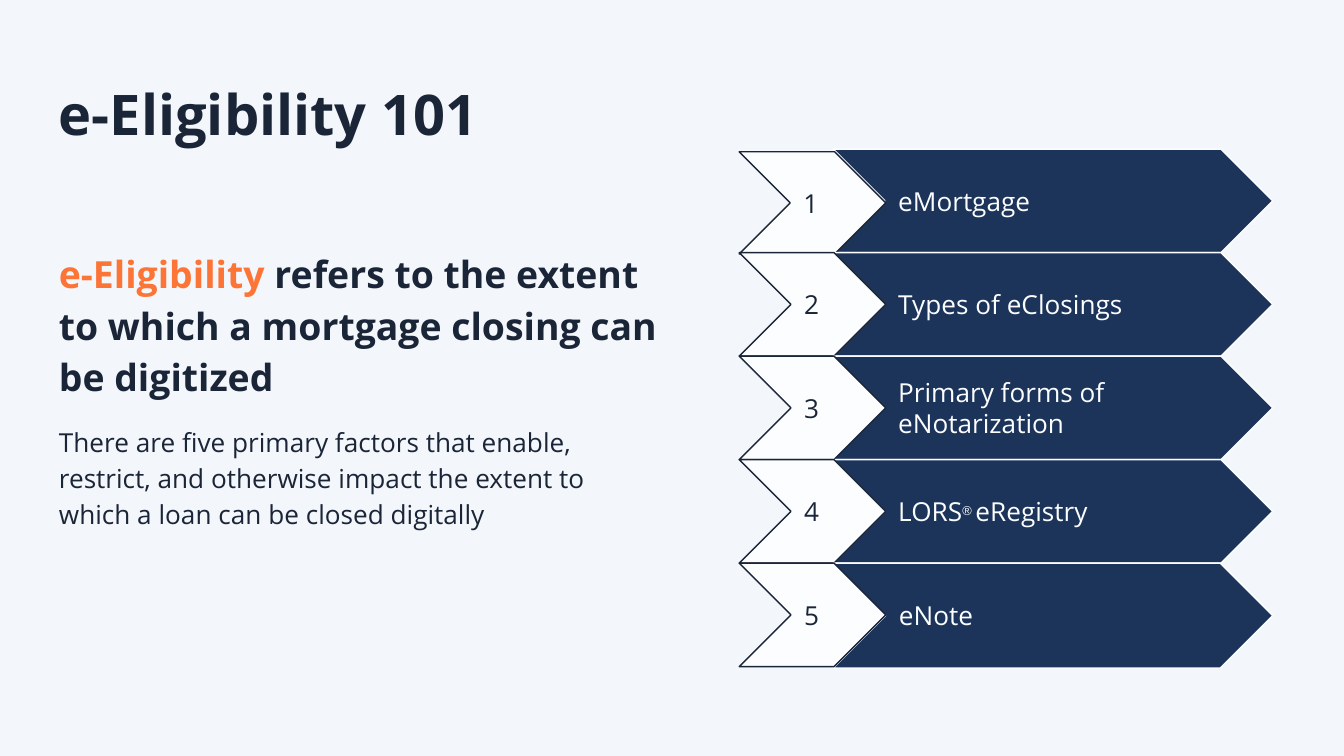
from pptx import Presentation
from pptx.dml.color import RGBColor as RGB
from pptx.enum.shapes import MSO_SHAPE as Shape
from pptx.enum.text import MSO_ANCHOR as Anchor, PP_ALIGN as Align
from pptx.util import Inches, Pt

COLORS = {"back": "F3F6FA", "ink": "1A2538", "accent": "FC7536",
          "navy": "1C345A", "white": "FCFDFF"}
FONT = "Open Sans"

# Each run: text, size, colour, then optional font settings
TITLE = [("e-Eligibility 101", 30, "ink", {"bold": True})]
LEAD = [
    ("e-Eligibility", 20, "accent", {"bold": True}),
    (" refers to the extent to which a mortgage closing can be digitized",
     20, "ink", {"bold": True}),
]
BODY = [("There are five primary factors that enable, restrict, and otherwise "
         "impact the extent to which a loan can be closed digitally", 14, "ink")]
FACTORS = [
    [("eMortgage", 14, "white")],
    [("Types of eClosings", 14, "white")],
    [("Primary forms of eNotarization", 14, "white")],
    [("LORS", 14, "white"),
     ("® ", 12, "white", {"face": "Arial", "raised": 30}),
     ("eRegistry", 14, "white")],
    [("eNote", 14, "white")],
]

TOP, STEP = 1.11, 0.77
NUM_X, NUM_W = 5.5, 1.09
BAR_X, BAR_W = 6.2, 3.27


def color(name):
    return RGB.from_string(COLORS[name])


def add_run(para, text, size, ink, style=None):
    style = style or {}
    run = para.add_run()
    run.text = text
    font = run.font
    font.name = style.get("face", FONT)
    font.size = Pt(size)
    font.bold = style.get("bold", False)
    font.color.rgb = color(ink)
    if "raised" in style:
        run._r.get_or_add_rPr().set("baseline", str(style["raised"] * 1000))


def fill_text(shape, paras, anchor=Anchor.TOP, line=None, gap=0):
    """Write lists of runs as paragraphs; gap is the space between them."""
    frame = shape.text_frame
    frame.word_wrap = True
    frame.vertical_anchor = anchor
    frame.margin_left = frame.margin_right = Inches(0.1)
    frame.margin_top = frame.margin_bottom = Inches(0.1)
    for i, runs in enumerate(paras):
        para = frame.add_paragraph() if i else frame.paragraphs[0]
        para.alignment = Align.LEFT
        if line:
            para.line_spacing = line
        if i:
            para.space_before = Pt(gap)
        for run in runs:
            add_run(para, *run)


def add_text(slide, box, paras, **layout):
    fill_text(slide.shapes.add_textbox(*map(Inches, box)), paras, **layout)


def add_chevron(slide, box, fill, line, runs):
    shape = slide.shapes.add_shape(Shape.CHEVRON, *map(Inches, box))
    shape.adjustments[0] = 0.5
    shape.shadow.inherit = False
    shape.fill.solid()
    shape.fill.fore_color.rgb = color(fill)
    shape.line.color.rgb = color(line)
    shape.line.width = Pt(0.75)
    fill_text(shape, [runs], anchor=Anchor.MIDDLE)


def main():
    deck = Presentation()
    deck.slide_width = Inches(10)
    deck.slide_height = deck.slide_width * 9 // 16
    slide = deck.slides.add_slide(deck.slide_layouts[6])
    slide.background.fill.solid()
    slide.background.fill.fore_color.rgb = color("back")

    add_text(slide, (0.34, 0.49, 3.67, 0.63), [TITLE])
    add_text(slide, (0.34, 1.72, 4.66, 2.64), [LEAD, BODY], line=1.15, gap=12)

    last = len(FACTORS) - 1
    for i, runs in enumerate(FACTORS):
        y = TOP + i * STEP
        # The last bar is slightly taller, the first number slightly lower
        extra = 0.01 if i == last else 0
        drop = 0.02 if i == 0 else 0
        add_chevron(slide, (BAR_X, y, BAR_W, STEP + extra),
                    "navy", "white", runs)
        add_chevron(slide, (NUM_X, y + drop, NUM_W, STEP - drop / 2),
                    "white", "ink", [(str(i + 1), 14, "ink")])

    deck.save("out.pptx")


if __name__ == "__main__":
    main()
